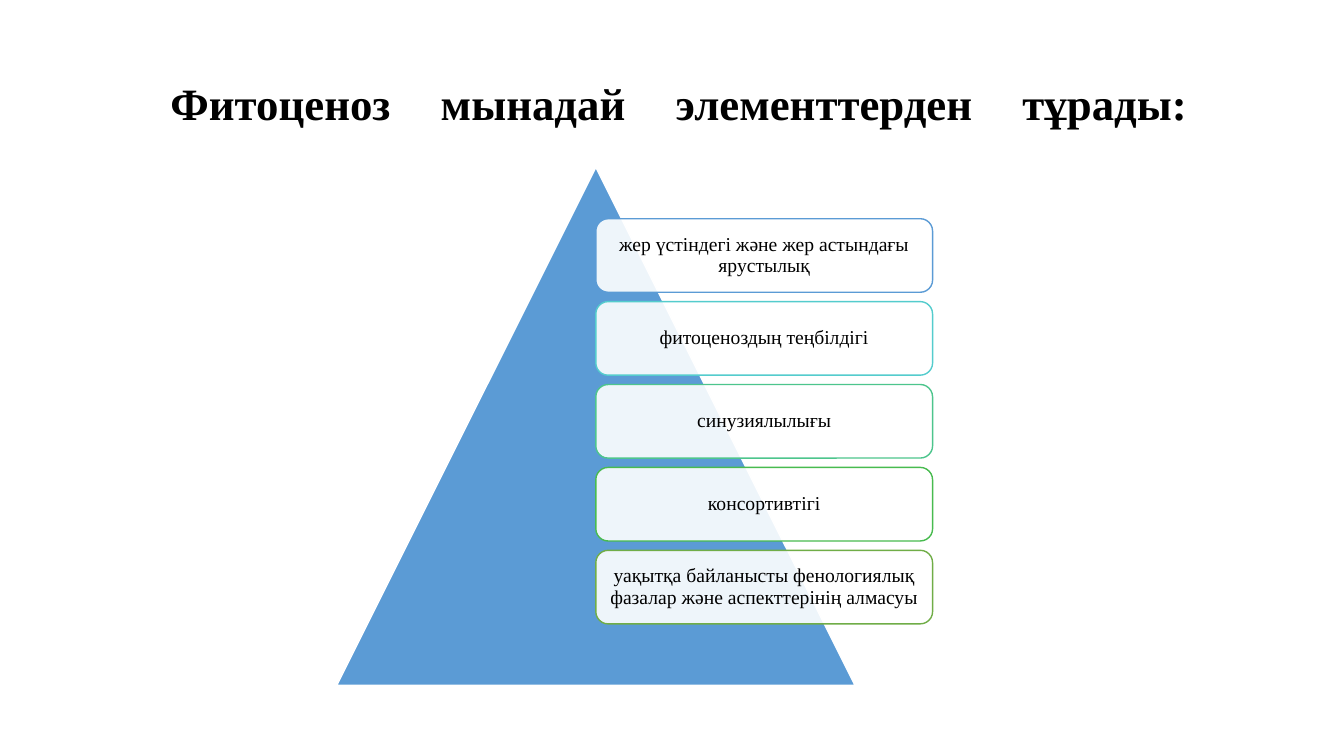
from lxml import etree
from pptx import Presentation
from pptx.dml.color import RGBColor
from pptx.enum.shapes import MSO_SHAPE as SHAPE
from pptx.enum.text import MSO_ANCHOR as ANCHOR, MSO_AUTO_SIZE as AUTO, PP_ALIGN as ALIGN
from pptx.oxml.ns import qn
from pptx.util import Inches, Pt

BLACK = RGBColor(0x00, 0x00, 0x00)
WHITE = RGBColor(0xFF, 0xFF, 0xFF)
BLUE = RGBColor(0x5B, 0x9B, 0xD5)
TEAL = RGBColor(0x54, 0xCC, 0xCD)
MINT = RGBColor(0x4D, 0xC5, 0x8D)
GREEN = RGBColor(0x48, 0xBB, 0x4F)
OLIVE = RGBColor(0x70, 0xAD, 0x47)

ELEMENTS = [
    ("жер үстіндегі және жер астындағы ярустылық", BLUE),
    ("фитоценоздың теңбілдігі", TEAL),
    ("синузиялылығы", MINT),
    ("консортивтігі", GREEN),
    ("уақытқа байланысты фенологиялық фазалар және аспекттерінің алмасуы", OLIVE),
]


class SlideBuilder:
    font = "Times New Roman"

    def __init__(self, prs):
        self.s = prs.slides.add_slide(prs.slide_layouts[5])
        self.diagram = None

    def style(self, p, size, align, bold=False):
        p.alignment = align
        p.line_spacing = 0.9
        p.font.name = self.font
        p.font.size = Pt(size)
        p.font.bold = bold
        p.font.color.rgb = BLACK

    def title(self, text, x, y, w, h):
        sp = self.s.shapes.title
        sp.left, sp.top, sp.width, sp.height = map(Inches, (x, y, w, h))
        tf = sp.text_frame
        tf.auto_size = AUTO.NONE
        tf.word_wrap = True
        tf.vertical_anchor = ANCHOR.MIDDLE
        p = tf.paragraphs[0]
        p.add_run().text = text
        p.add_line_break()  # the break justifies the only line
        self.style(p, 32, ALIGN.JUSTIFY, bold=True)

    def start_diagram(self):
        self.diagram = self.s.shapes.add_group_shape()

    def shape(self, kind, x, y, w, h, fill, line):
        sp = self.diagram.shapes.add_shape(kind, *map(Inches, (x, y, w, h)))
        sp.shadow.inherit = False
        sp.fill.solid()
        sp.fill.fore_color.rgb = fill
        sp.line.color.rgb = line
        sp.line.width = Pt(1)
        return sp

    def card(self, text, x, y, w, h, line):
        sp = self.shape(SHAPE.ROUNDED_RECTANGLE, x, y, w, h, WHITE, line)
        color = sp.fill._xPr.find(qn("a:solidFill"))[0]
        etree.SubElement(color, qn("a:alpha"), val="90000")
        tf = sp.text_frame
        tf.word_wrap = True
        tf.vertical_anchor = ANCHOR.MIDDLE
        tf.margin_left = tf.margin_right = tf.margin_top = tf.margin_bottom = Inches(0.06)
        p = tf.paragraphs[0]
        p.text = text
        self.style(p, 14, ALIGN.CENTER)


def main():
    prs = Presentation()
    prs.slide_width, prs.slide_height = Inches(13.33), Inches(7.5)
    slide = SlideBuilder(prs)

    # Title
    slide.title("Фитоценоз мынадай элементтерден тұрады: ", 1.59, 0.63, 10.79, 1.37)

    # Pyramid
    slide.start_diagram()
    slide.shape(SHAPE.ISOSCELES_TRIANGLE, 3.34, 1.66, 5.14, 5.14, BLUE, WHITE)

    # Cards, evenly spaced from first to last
    first, last = 2.17, 5.46
    pitch = (last - first) / (len(ELEMENTS) - 1)
    for i, (text, color) in enumerate(ELEMENTS):
        slide.card(text, 5.91, first + i * pitch, 3.34, 0.73, color)

    prs.save("out.pptx")


if __name__ == "__main__":
    main()
